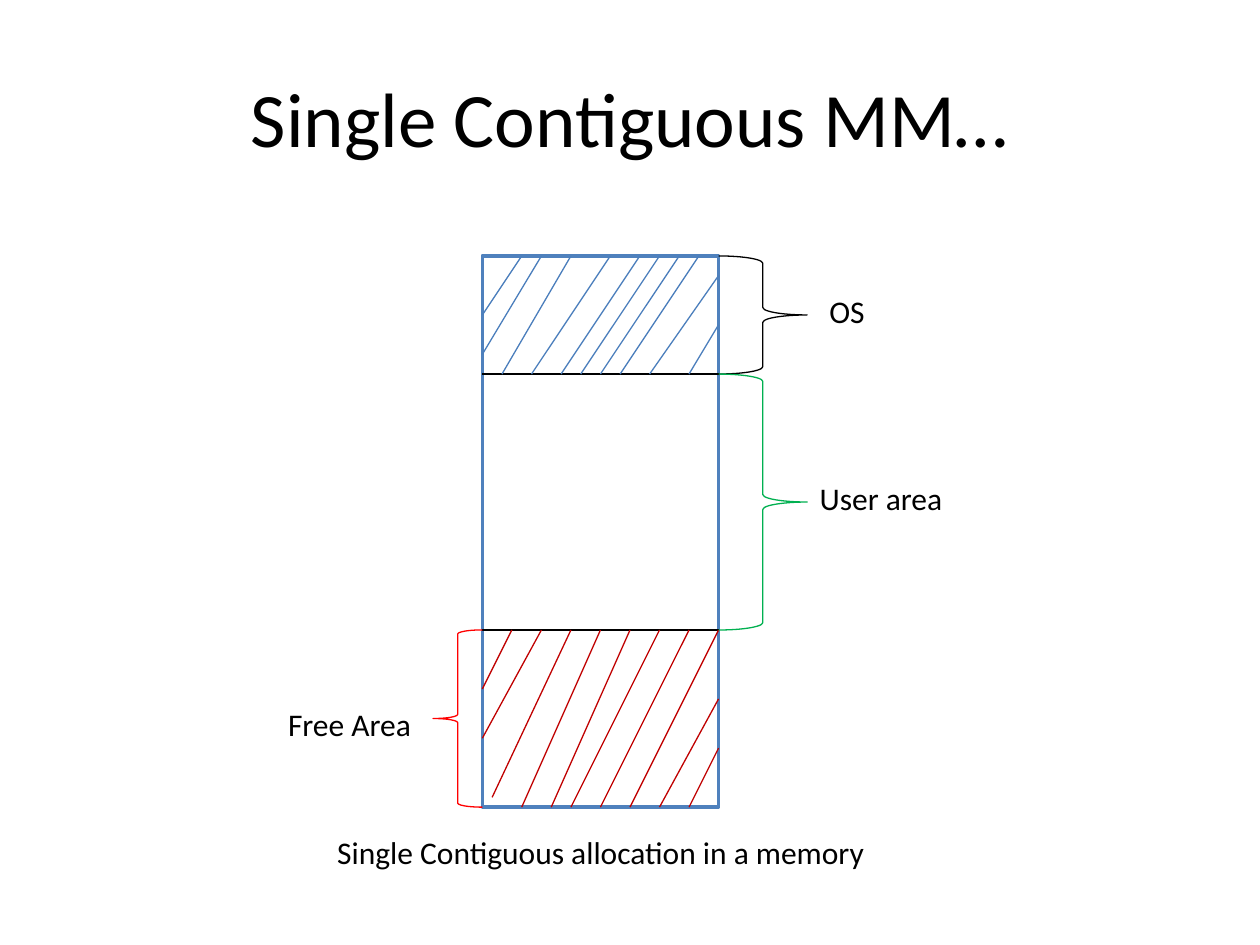
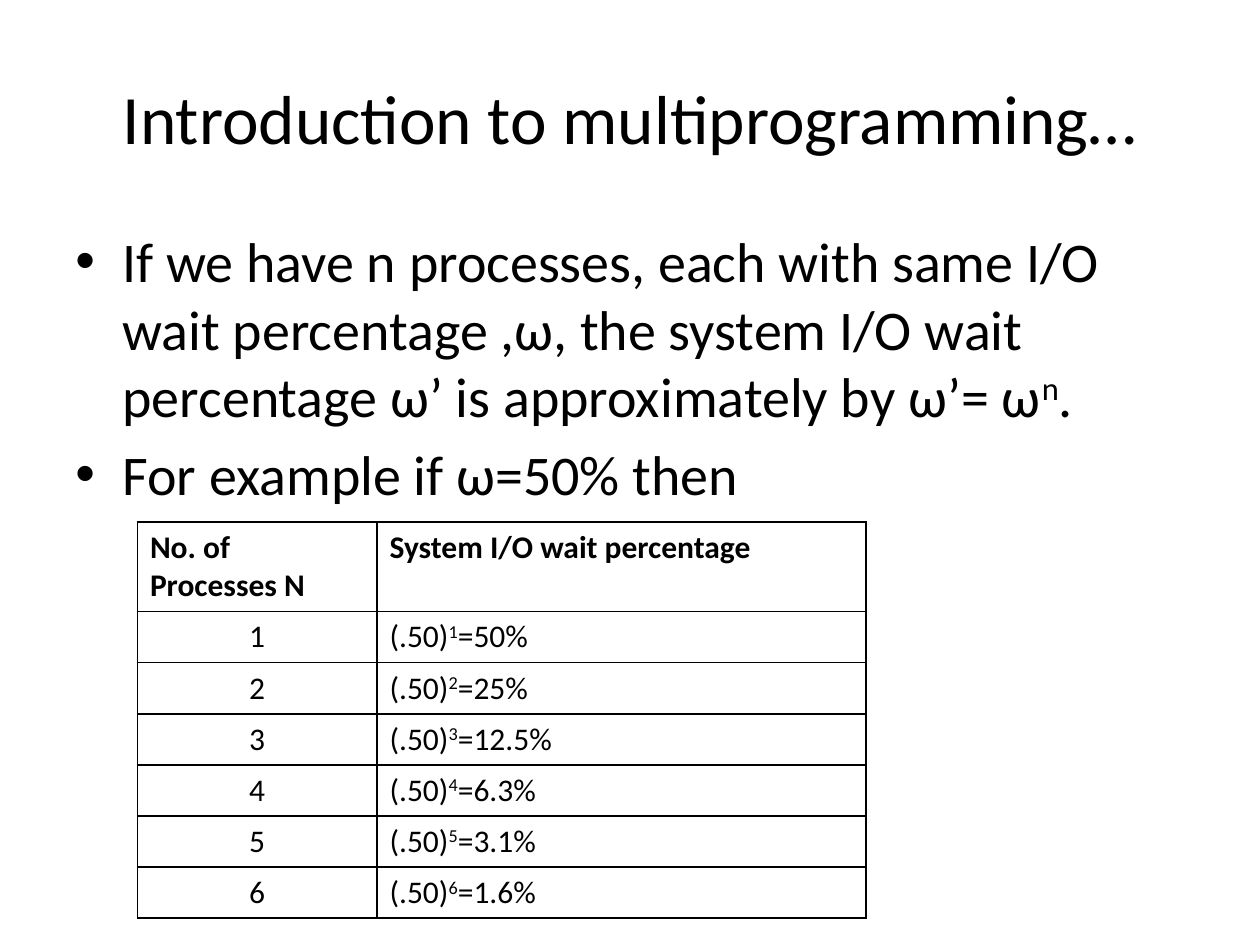
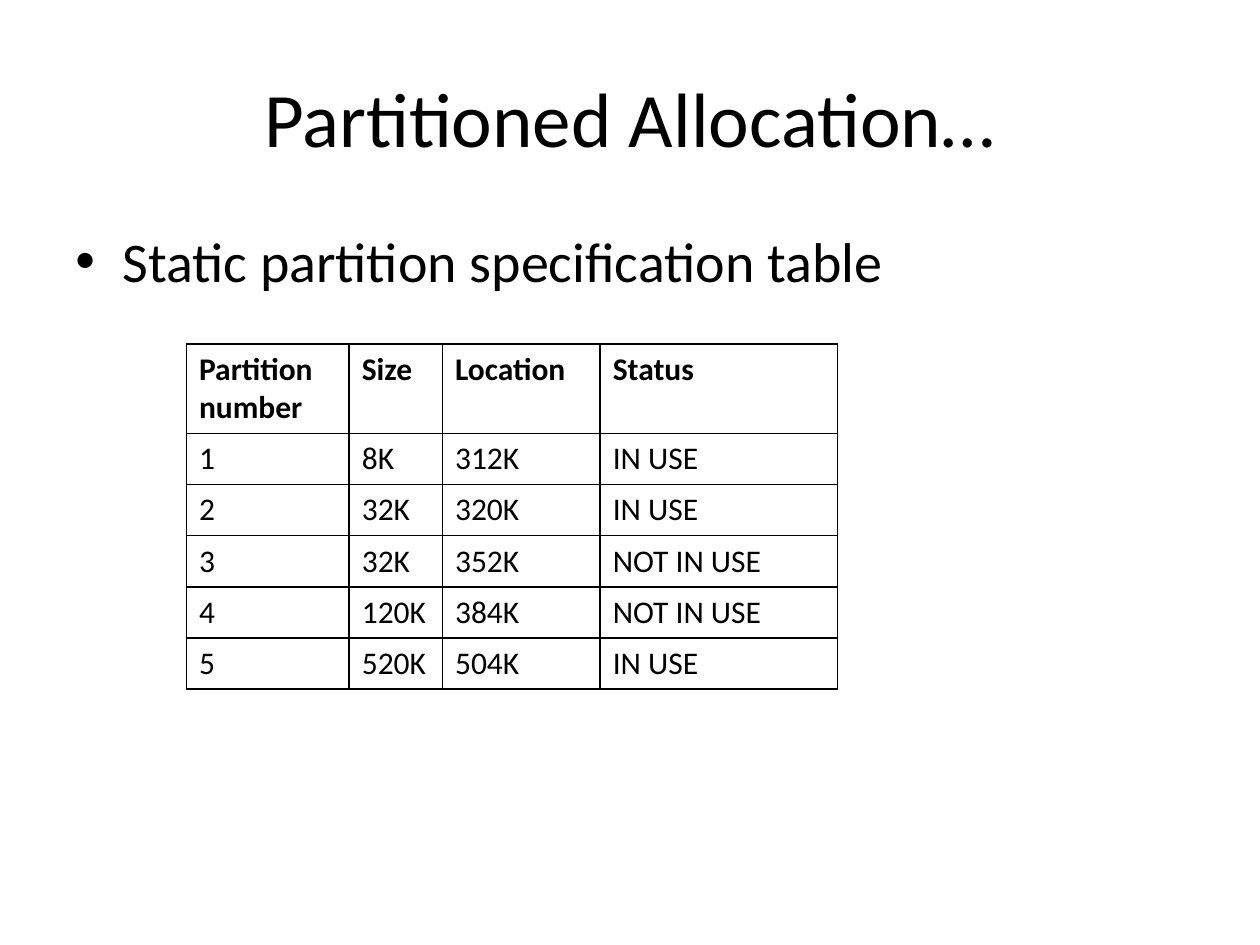
from lxml.etree import SubElement as Sub
from pptx import Presentation
from pptx.dml.color import RGBColor
from pptx.enum.shapes import MSO_CONNECTOR as Link, MSO_SHAPE as Kind
from pptx.enum.text import MSO_ANCHOR as Anchor, PP_ALIGN as Align
from pptx.oxml.ns import qn
from pptx.util import Cm, Pt

FONT = "Calibri"
BLACK = RGBColor(0x00, 0x00, 0x00)
WHITE = RGBColor(0xFF, 0xFF, 0xFF)
FRAME = RGBColor(0x4F, 0x81, 0xBD)
BLUE = RGBColor(0x4B, 0x7E, 0xBC)
CRIMSON = RGBColor(0xC0, 0x00, 0x00)
GREEN = RGBColor(0x00, 0xB0, 0x50)
RED = RGBColor(0xFF, 0x00, 0x00)

# Text between two ^ signs is raised.
TITLES = [
    ("Single Contiguous MM…", 44),
    ("Introduction to multiprogramming…", 39.6),
    ("Partitioned Allocation…", 44),
]
WAIT_TEXT = [
    "If we have n processes, each with same I/O wait percentage ,ω, "
    "the system I/O wait percentage ω’ is approximately by ω’= ω^n^.",
    "For example if ω=50% then",
]
WAITS = ["50%", "25%", "12.5%", "6.3%", "3.1%", "1.6%"]
WAIT_ROWS = [("No. of \nProcesses N", "System I/O wait percentage")] + [
    (str(n), f"(.50)^{n}^={wait}") for n, wait in enumerate(WAITS, 1)]
PART_TEXT = ["Static partition specification table"]
PART_ROWS = [
    ("Partition number", "Size", "Location", "Status"),
    ("1", "8K", "312K", "IN USE"),
    ("2", "32K", "320K", "IN USE"),
    ("3", "32K", "352K", "NOT IN USE"),
    ("4", "120K", "384K", "NOT IN USE"),
    ("5", "520K", "504K", "IN USE"),
]

# The memory drawing lies on a grid of 128 by 96 units.
GRID = 2.54 / 12.8
LEFT, WIDE = 49, 24
RIGHT = LEFT + WIDE
OS_TOP, USER_TOP, FREE_TOP, END = 26, 38, 64, 82
# Strokes are x, y, x, y from the top left corner of their area.
OS_HATCH = [
    (0, 6, 4, 0), (0, 10, 6, 0), (2, 12, 9, 0), (5, 12, 13, 0),
    (8, 12, 16, 0), (10, 12, 18, 0), (12, 12, 20, 0), (14, 12, 22, 0),
    (17, 12, 24, 2), (21, 12, 24, 7),
]
FREE_HATCH = [
    (0, 6, 3, 0), (0, 11, 6, 0), (1, 17, 9, 0), (4, 18, 12, 0),
    (7, 18, 15, 0), (9, 18, 18, 0), (12, 18, 21, 0), (15, 18, 24, 0),
    (18, 18, 24, 7), (21, 18, 24, 12),
]
BRACES = [
    (Kind.RIGHT_BRACE, RIGHT, OS_TOP, 9, USER_TOP, BLACK),
    (Kind.RIGHT_BRACE, RIGHT, USER_TOP, 9, FREE_TOP, GREEN),
    (Kind.LEFT_BRACE, LEFT - 5, FREE_TOP, 5, END, RED),
]
LABELS = [
    ("OS", 83, 29, 7),
    ("User area", 82, 48, 16),
    ("Free Area", 28, 71, 16),
    ("Single Contiguous allocation in a memory", 33, 84, 58),
]


def unit(n):
    return Cm(n * GRID)


def write(para, text, size, bold=False):
    for i, part in enumerate(text.split("^")):
        for j, line in enumerate(part.split("\n")):
            if j:
                para.add_line_break()
            run = para.add_run()
            run.text = line
            font = run.font
            font.name, font.size, font.bold = FONT, Pt(size), bold
            font.color.rgb = BLACK
            if i % 2:
                run._r.get_or_add_rPr().set("baseline", "30000")


def add_box(slide, x, y, w, h):
    frame = slide.shapes.add_textbox(x, y, w, h).text_frame
    frame.word_wrap = True
    return frame


def add_title(slide, text, size):
    frame = add_box(slide, Cm(1.27), Cm(0.76), Cm(22.86), Cm(3.18))
    frame.vertical_anchor = Anchor.MIDDLE
    para = frame.paragraphs[0]
    para.alignment = Align.CENTER
    write(para, text, size)


def add_body(slide, items):
    frame = add_box(slide, Cm(1.27), Cm(4.45), Cm(22.86), Cm(12.57))
    for i, item in enumerate(items):
        para = frame.add_paragraph() if i else frame.paragraphs[0]
        para.space_before = Pt(6.4)
        props = para._p.get_or_add_pPr()
        props.set("marL", str(Cm(0.95)))
        props.set("indent", str(-Cm(0.95)))
        Sub(props, qn("a:buFont"), typeface="Arial")
        Sub(props, qn("a:buChar"), char="•")
        write(para, item, 32)


def add_border(cell):
    props = cell._tc.get_or_add_tcPr()
    for side in ("lnL", "lnR", "lnT", "lnB"):
        edge = Sub(props, qn("a:" + side), w=str(Pt(1)))
        fill = Sub(edge, qn("a:solidFill"))
        Sub(fill, qn("a:srgbClr"), val=str(BLACK))


def add_grid(slide, rows, x, y, widths, centred=()):
    """Add a ruled table; body cells of the centred columns are centred."""
    heights = [1.81] + [1.03] * (len(rows) - 1)
    table = slide.shapes.add_table(
        len(rows), len(widths), Cm(x), Cm(y),
        Cm(sum(widths)), Cm(sum(heights))).table
    table.first_row = table.horz_banding = False
    for col, width in zip(table.columns, widths):
        col.width = Cm(width)
    for r, (row, height) in enumerate(zip(rows, heights)):
        table.rows[r].height = Cm(height)
        for c, text in enumerate(row):
            cell = table.cell(r, c)
            add_border(cell)
            cell.fill.solid()
            cell.fill.fore_color.rgb = WHITE
            para = cell.text_frame.paragraphs[0]
            if r and c in centred:
                para.alignment = Align.CENTER
            write(para, text, 18, bold=r == 0)


def add_line(slide, x1, y1, x2, y2, color):
    line = slide.shapes.add_connector(
        Link.STRAIGHT, unit(x1), unit(y1), unit(x2), unit(y2))
    line.line.color.rgb = color
    line.line.width = Pt(0.75)
    Sub(line._element.spPr, qn("a:effectLst"))


def add_shape(slide, kind, x, y, w, h, color, width):
    shape = slide.shapes.add_shape(kind, unit(x), unit(y), unit(w), unit(h))
    shape.shadow.inherit = False
    shape.fill.background()
    shape.line.color.rgb = color
    shape.line.width = Pt(width)
    return shape


def add_memory(slide):
    block = add_shape(slide, Kind.RECTANGLE, LEFT, OS_TOP, WIDE,
                      END - OS_TOP, FRAME, 2)
    block.fill.solid()
    block.fill.fore_color.rgb = WHITE
    for y in (USER_TOP, FREE_TOP):
        add_line(slide, LEFT, y, RIGHT, y, BLACK)
    for top, hatch, color in ((OS_TOP, OS_HATCH, BLUE),
                              (FREE_TOP, FREE_HATCH, CRIMSON)):
        for x1, y1, x2, y2 in hatch:
            add_line(slide, LEFT + x1, top + y1, LEFT + x2, top + y2, color)
    for kind, x, top, wide, end, color in BRACES:
        add_shape(slide, kind, x, top, wide, end - top, color, 0.75)
    for text, x, y, wide in LABELS:
        frame = add_box(slide, unit(x), unit(y), unit(wide), Cm(1.03))
        write(frame.paragraphs[0], text, 18)


def main():
    deck = Presentation()
    deck.slide_width, deck.slide_height = Cm(25.4), Cm(19.05)
    slides = []
    for text, size in TITLES:
        slide = deck.slides.add_slide(deck.slide_layouts[6])
        add_title(slide, text, size)
        slides.append(slide)
    memory, waits, parts = slides
    add_memory(memory)
    add_body(waits, WAIT_TEXT)
    add_grid(waits, WAIT_ROWS, 2.77, 10.52, [4.83, 9.86], centred=(0,))
    add_body(parts, PART_TEXT)
    add_grid(parts, PART_ROWS, 3.76, 6.93, [3.28, 1.88, 3.18, 4.78])
    deck.save("out.pptx")


if __name__ == "__main__":
    main()
